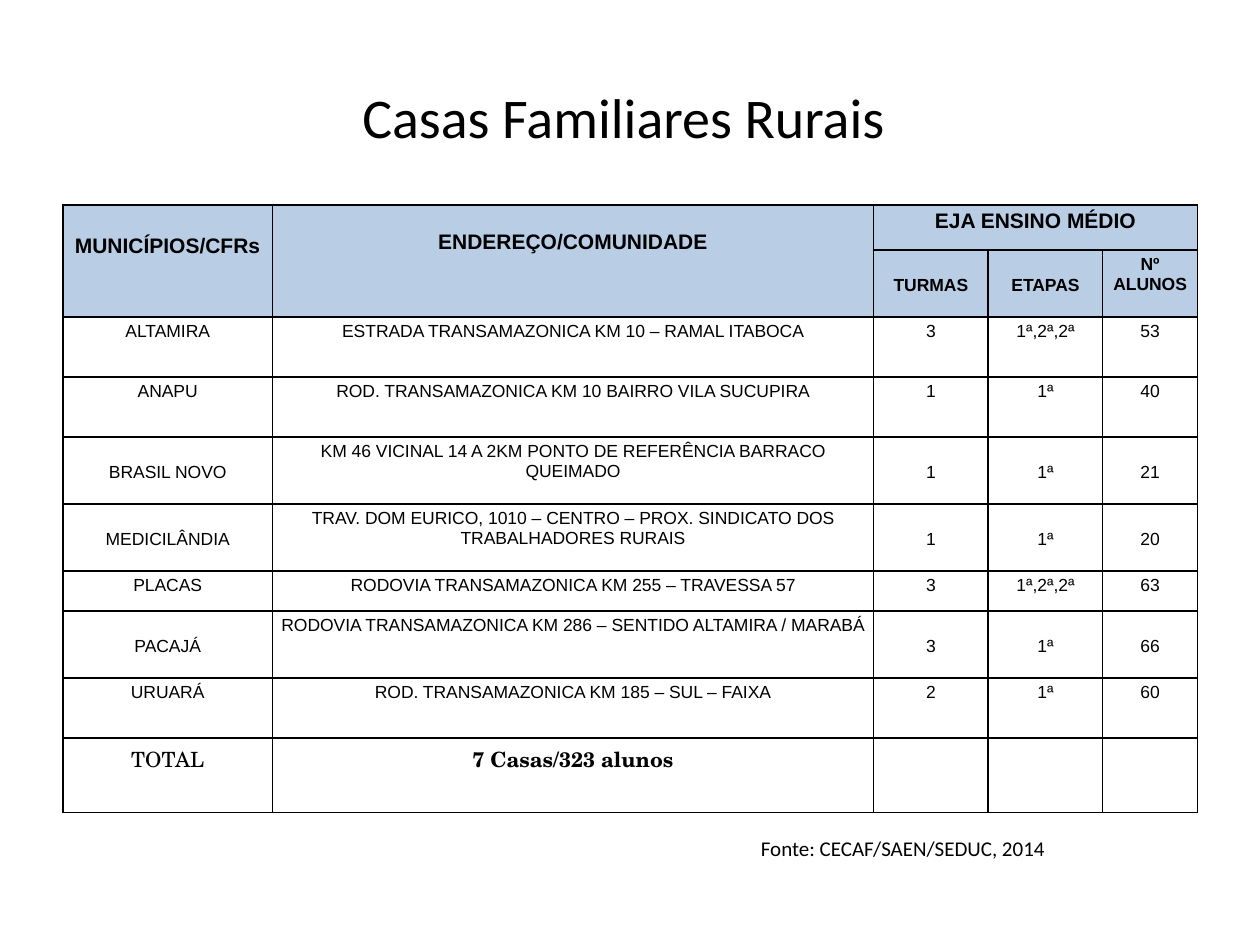
from lxml.etree import SubElement
from pptx import Presentation
from pptx.dml.color import RGBColor
from pptx.enum.text import MSO_ANCHOR, PP_ALIGN as Align
from pptx.oxml.ns import qn
from pptx.util import Cm, Pt

# Content
TITLE = "Casas Familiares Rurais "
SOURCE = "Fonte: CECAF/SAEN/SEDUC, 2014"
GROUP_HEADS = ["MUNICÍPIOS/CFRs", "ENDEREÇO/COMUNIDADE", "EJA ENSINO MÉDIO"]
CLASS_HEADS = ["TURMAS", "ETAPAS", "Nº ALUNOS"]
# Row height in cm, then the five cells
HOUSES = [
    (1.21, "ALTAMIRA", "ESTRADA TRANSAMAZONICA KM 10 – RAMAL ITABOCA", "3", "1ª,2ª,2ª", "53"),
    (1.21, "ANAPU", "ROD. TRANSAMAZONICA KM 10 BAIRRO VILA SUCUPIRA", "1", "1ª", "40"),
    (1.35, "BRASIL NOVO", "KM 46 VICINAL 14 A 2KM PONTO DE REFERÊNCIA BARRACO QUEIMADO",
     "1", "1ª", "21"),
    (1.35, "MEDICILÂNDIA",
     "TRAV. DOM EURICO, 1010 – CENTRO – PROX. SINDICATO DOS TRABALHADORES RURAIS",
     "1", "1ª", "20"),
    (0.81, "PLACAS", "RODOVIA TRANSAMAZONICA KM 255 – TRAVESSA 57", "3", "1ª,2ª,2ª", "63"),
    (1.35, "PACAJÁ", "RODOVIA TRANSAMAZONICA KM 286 – SENTIDO ALTAMIRA / MARABÁ",
     "3", "1ª", "66"),
    (1.21, "URUARÁ", "ROD. TRANSAMAZONICA KM 185 – SUL – FAIXA", "2", "1ª", "60"),
]
TOTAL = ["TOTAL", "7 Casas/323 alunos"]

# Layout in cm
COLUMNS = [4.22, 12.12, 2.31, 2.31, 1.91]
HEIGHTS = [0.91, 1.35] + [house[0] for house in HOUSES] + [1.5]
MARGIN = 0.1
LINE_10, LINE_12 = 0.41, 0.49  # one line of text at 10 and 12 pt
TALL = 1.35  # rows of this height set the short cells one line lower


def rgb(value):
    return RGBColor.from_string(value)


def write(frame, text, size, font="Calibri", bold=False, align=Align.LEFT):
    paragraph = frame.paragraphs[0]
    paragraph.alignment = align
    run = paragraph.add_run()
    run.text = text
    run.font.size, run.font.name, run.font.bold = Pt(size), font, bold
    run.font.color.rgb = rgb("000000")


def style_cell(cell, fill):
    cell.margin_left = cell.margin_right = cell.margin_top = cell.margin_bottom = Cm(MARGIN)
    properties = cell._tc.get_or_add_tcPr()
    for side in ("a:lnL", "a:lnR", "a:lnT", "a:lnB"):
        line = SubElement(properties, qn(side), w=str(Pt(1)))
        SubElement(SubElement(line, qn("a:solidFill")), qn("a:srgbClr"), val="000000")
    if fill:
        cell.fill.solid()
        cell.fill.fore_color.rgb = rgb(fill)
    else:
        cell.fill.background()


def fill_cell(cell, text, size=10, drop=0, font="Arial", bold=False):
    cell.margin_top = Cm(MARGIN + drop)
    write(cell.text_frame, text, size, font, bold, Align.CENTER)


deck = Presentation()
deck.slide_width, deck.slide_height = Cm(25.4), Cm(19.05)
slide = deck.slides.add_slide(deck.slide_layouts[5])

# Title
title = slide.shapes.title
title.left, title.top, title.width, title.height = Cm(1.27), Cm(0.76), Cm(22.86), Cm(3.18)
title.text_frame.vertical_anchor = MSO_ANCHOR.MIDDLE
write(title.text_frame, TITLE, 32, align=Align.CENTER)

# Table grid
houses = slide.shapes.add_table(len(HEIGHTS), len(COLUMNS), Cm(1.27), Cm(4.13),
                                Cm(sum(COLUMNS)), Cm(sum(HEIGHTS))).table
houses.first_row = houses.horz_banding = False
for column, width in zip(houses.columns, COLUMNS):
    column.width = Cm(width)
for index, (row, height) in enumerate(zip(houses.rows, HEIGHTS)):
    row.height = Cm(height)
    for cell in row.cells:
        style_cell(cell, "B9CDE5" if index < 2 else None)

# Header rows
for column in (0, 1):
    houses.cell(0, column).merge(houses.cell(1, column))
houses.cell(0, 2).merge(houses.cell(0, 4))
for column, (head, drop) in enumerate(zip(GROUP_HEADS, (LINE_12, LINE_10, 0))):
    fill_cell(houses.cell(0, column), head, 12, drop, bold=True)
for column, (head, drop) in enumerate(zip(CLASS_HEADS, (LINE_10, LINE_10, 0)), start=2):
    fill_cell(houses.cell(1, column), head, drop=drop, bold=True)

# One row per house
for row, (height, *entries) in enumerate(HOUSES, start=2):
    for column, entry in enumerate(entries):
        lowered = height == TALL and column != 1
        fill_cell(houses.cell(row, column), entry, drop=LINE_10 if lowered else 0)

# Total row
for column, entry in enumerate(TOTAL):
    fill_cell(houses.cell(len(HEIGHTS) - 1, column), entry, 12,
              font="TeX Gyre Schola", bold=column == 1)

# Source line
source = slide.shapes.add_textbox(Cm(15.09), Cm(16.71), Cm(9.8), Cm(0.77))
source.text_frame.word_wrap = True
write(source.text_frame, SOURCE, 12)

deck.save("out.pptx")
